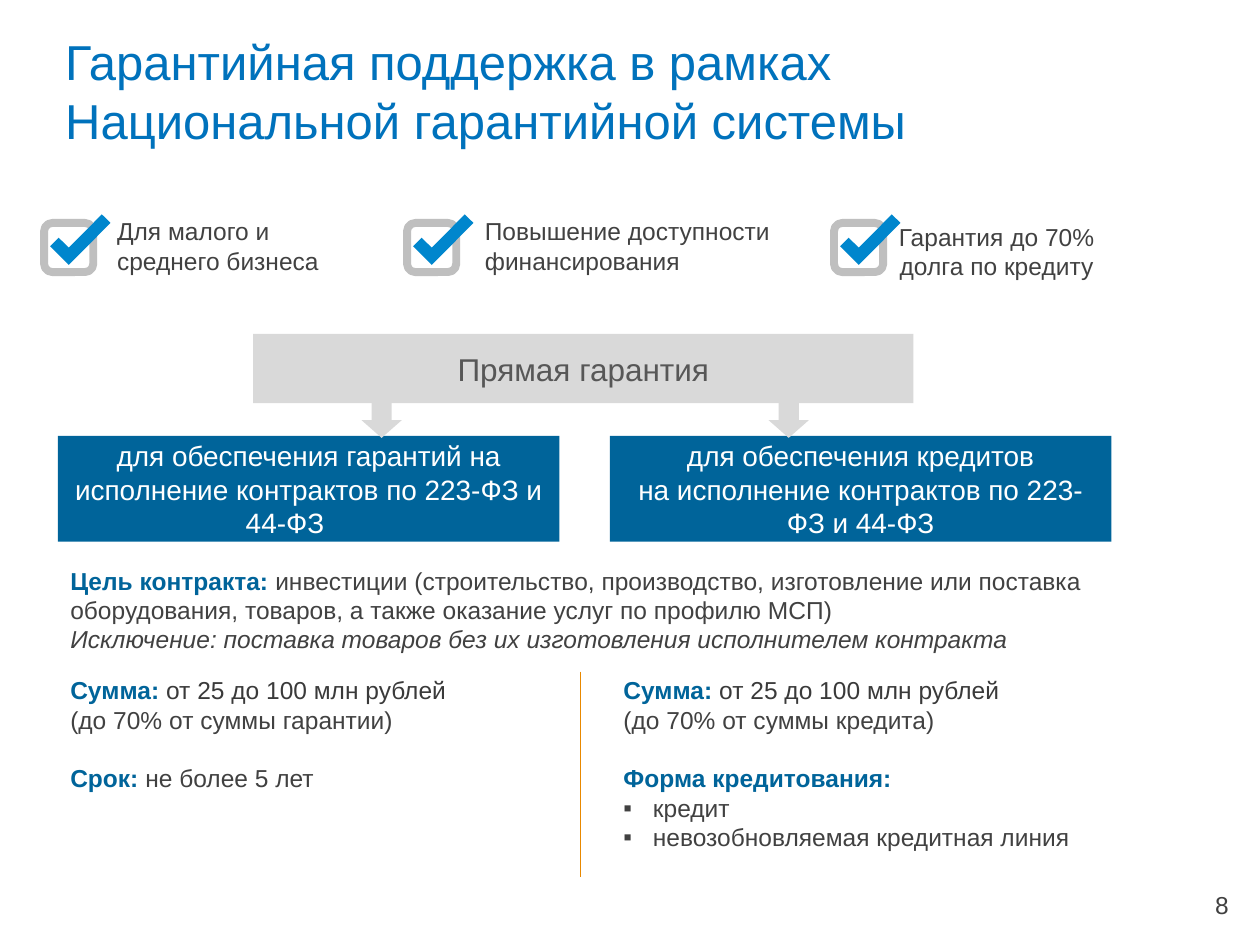
from lxml import etree
from pptx import Presentation
from pptx.dml.color import RGBColor
from pptx.enum.shapes import MSO_CONNECTOR, MSO_SHAPE
from pptx.enum.text import MSO_ANCHOR, PP_ALIGN
from pptx.oxml.ns import qn
from pptx.util import Pt

LEFT, CENTER, RIGHT = PP_ALIGN.LEFT, PP_ALIGN.CENTER, PP_ALIGN.RIGHT
TOP, MIDDLE = MSO_ANCHOR.TOP, MSO_ANCHOR.MIDDLE
RECTANGLE, ROUNDED = MSO_SHAPE.RECTANGLE, MSO_SHAPE.ROUNDED_RECTANGLE
CORNER, DOWN_ARROW = MSO_SHAPE.CORNER, MSO_SHAPE.DOWN_ARROW


class Theme:
    font = "Arial"
    title, heading, label, body = 28, 18, 16, 14
    leading = 1.2
    title_blue, tick_blue, navy = "0072BC", "0086CD", "00649A"
    text, amount, number, heading_grey = "414141", "3A3A3A", "404040", "575757"
    panel, outline, white, orange = "D9D9D9", "BFBFBF", "FFFFFF", "E88800"


TITLE = ["Гарантийная поддержка в рамках", "\v", "Национальной гарантийной системы"]
BENEFITS = [
    (25.2, (59.8, 120.2, 147.6, 41), LEFT, ["Для малого и", "среднего бизнеса"]),
    (232.6, (270, 120.2, 191.5, 41), LEFT, ["Повышение доступности финансирования"]),
    (476.6, (490.3, 123.1, 158.4, 41), CENTER, ["Гарантия до 70%", "долга по кредиту"]),
]
GUARANTEE = "Прямая гарантия"
PURPOSES = [
    (33.1, 206.6, ["для обеспечения гарантий на исполнение контрактов по 223-ФЗ и 44-ФЗ\t"]),
    (348.5, 439.2, ["для обеспечения кредитов", "на исполнение контрактов по 223-ФЗ и 44-ФЗ"]),
]
GOAL = [
    [("Цель контракта: ", "term"),
     ("инвестиции (строительство, производство, изготовление или поставка "
      "оборудования, товаров, а также оказание услуг по профилю МСП)", "plain")],
    [("Исключение: поставка товаров без их изготовления исполнителем контракта", "note")],
]
AMOUNT = [("Сумма: ", "term"), ("от 25 до 100 млн рублей", "amount")]
TERMS = [
    (33.1, [
        AMOUNT,
        [("(до 70% от суммы гарантии)", "plain")],
        [("Срок: ", "term"), ("не более 5 лет", "plain")],
    ], []),
    (349.2, [
        AMOUNT,
        [("(до 70% от суммы кредита)", "plain")],
        [("Форма кредитования:", "term")],
    ], ["кредит", "невозобновляемая кредитная линия"]),
]
PAGE_NUMBER = "8"
STYLES = {
    "term": (Theme.navy, True, False),
    "plain": (Theme.text, False, False),
    "amount": (Theme.amount, False, False),
    "note": (Theme.text, False, True),
    "title": (Theme.title_blue, False, False),
    "heading": (Theme.heading_grey, False, False),
    "label": (Theme.white, False, False),
    "number": (Theme.number, False, False),
}


def colour(value):
    return RGBColor.from_string(value)


def points(frame):
    return [Pt(value) for value in frame]


def plain(lines, style="plain"):
    return [[(line, style)] for line in lines]


def write(shape, paragraphs, size=Theme.body, align=LEFT, anchor=TOP, inset=(7.2, 3.6)):
    frame = shape.text_frame
    frame.word_wrap = True
    frame.vertical_anchor = anchor
    frame.margin_left = frame.margin_right = Pt(inset[0])
    frame.margin_top = frame.margin_bottom = Pt(inset[1])
    for index, spans in enumerate(paragraphs):
        para = frame.add_paragraph() if index else frame.paragraphs[0]
        para.alignment = align
        para.line_spacing = Pt(size * Theme.leading)
        for text, style in spans:
            if text == "\v":
                para.add_line_break()
                continue
            span = para.add_run()
            span.text = text
            shade, bold, italic = STYLES[style]
            font = span.font
            font.name, font.size = Theme.font, Pt(size)
            font.bold, font.italic = bold, italic
            font.color.rgb = colour(shade)
    return frame.paragraphs


def add_text(page, frame, paragraphs, **options):
    return write(page.shapes.add_textbox(*points(frame)), paragraphs, **options)


def add_shape(page, kind, frame, fill=None):
    shape = page.shapes.add_shape(kind, *points(frame))
    shape.shadow.inherit = False
    shape.line.fill.background()
    if fill:
        shape.fill.solid()
        shape.fill.fore_color.rgb = colour(fill)
    else:
        shape.fill.background()
    return shape


def add_checkbox(page, left, top=127.4):
    square = add_shape(page, ROUNDED, (left, top, 28.1, 28.1))
    square.line.color.rgb = colour(Theme.outline)
    square.line.width = Pt(4.5)
    tick = add_shape(page, CORNER, (left + 3.8, top - 0.9, 33.8, 15.1), Theme.tick_blue)
    tick.rotation = 314.8
    tick.adjustments[0] = tick.adjustments[1] = 0.46


def add_bullet(para, indent=16.8):
    properties = para._p.get_or_add_pPr()
    properties.set("marL", str(Pt(indent)))
    properties.set("indent", str(-Pt(indent)))
    etree.SubElement(properties, qn("a:buFont")).set("typeface", Theme.font)
    etree.SubElement(properties, qn("a:buChar")).set("char", "▪")


def add_divider(page, x, top, bottom):
    line = page.shapes.add_connector(MSO_CONNECTOR.STRAIGHT, *points((x, top, x, bottom)))
    line.line.color.rgb = colour(Theme.orange)
    line.line.width = Pt(0.75)
    etree.SubElement(line._element.spPr, qn("a:effectLst"))


def main():
    deck = Presentation()
    deck.slide_width, deck.slide_height = Pt(720), Pt(540)
    page = deck.slides.add_slide(deck.slide_layouts[6])

    add_text(page, (541.4, 502.6, 167.8, 28.8), plain([PAGE_NUMBER], "number"),
             align=RIGHT, anchor=MIDDLE)
    add_text(page, (30.2, 14.4, 630, 68.4), [[(part, "title") for part in TITLE]],
             size=Theme.title)

    for left, frame, align, lines in BENEFITS:
        add_text(page, frame, plain(lines), align=align)
        add_checkbox(page, left)

    bar = add_shape(page, RECTANGLE, (144.7, 190.8, 377.3, 39.6), Theme.panel)
    write(bar, plain([GUARANTEE], "heading"), size=Theme.heading,
          align=CENTER, anchor=MIDDLE, inset=(5.76, 2.88))

    for left, arrow_left, lines in PURPOSES:
        box = add_shape(page, RECTANGLE, (left, 249.1, 286.6, 60.5), Theme.navy)
        write(box, plain(lines, "label"), size=Theme.label,
              align=CENTER, anchor=MIDDLE, inset=(5.76, 2.88))
        add_shape(page, DOWN_ARROW, (arrow_left, 230, 23, 20.2), Theme.panel)

    add_text(page, (33.1, 319.7, 601.9, 58.3), GOAL)
    for left, paragraphs, options in TERMS:
        paras = add_text(page, (left, 382.3, 285.8, 109), paragraphs + plain(options))
        paras[2].space_before = Pt(Theme.body * Theme.leading)
        for para in paras[len(paragraphs):]:
            add_bullet(para)
    add_divider(page, 331.9, 383.8, 501.1)

    deck.save("out.pptx")


if __name__ == "__main__":
    main()
